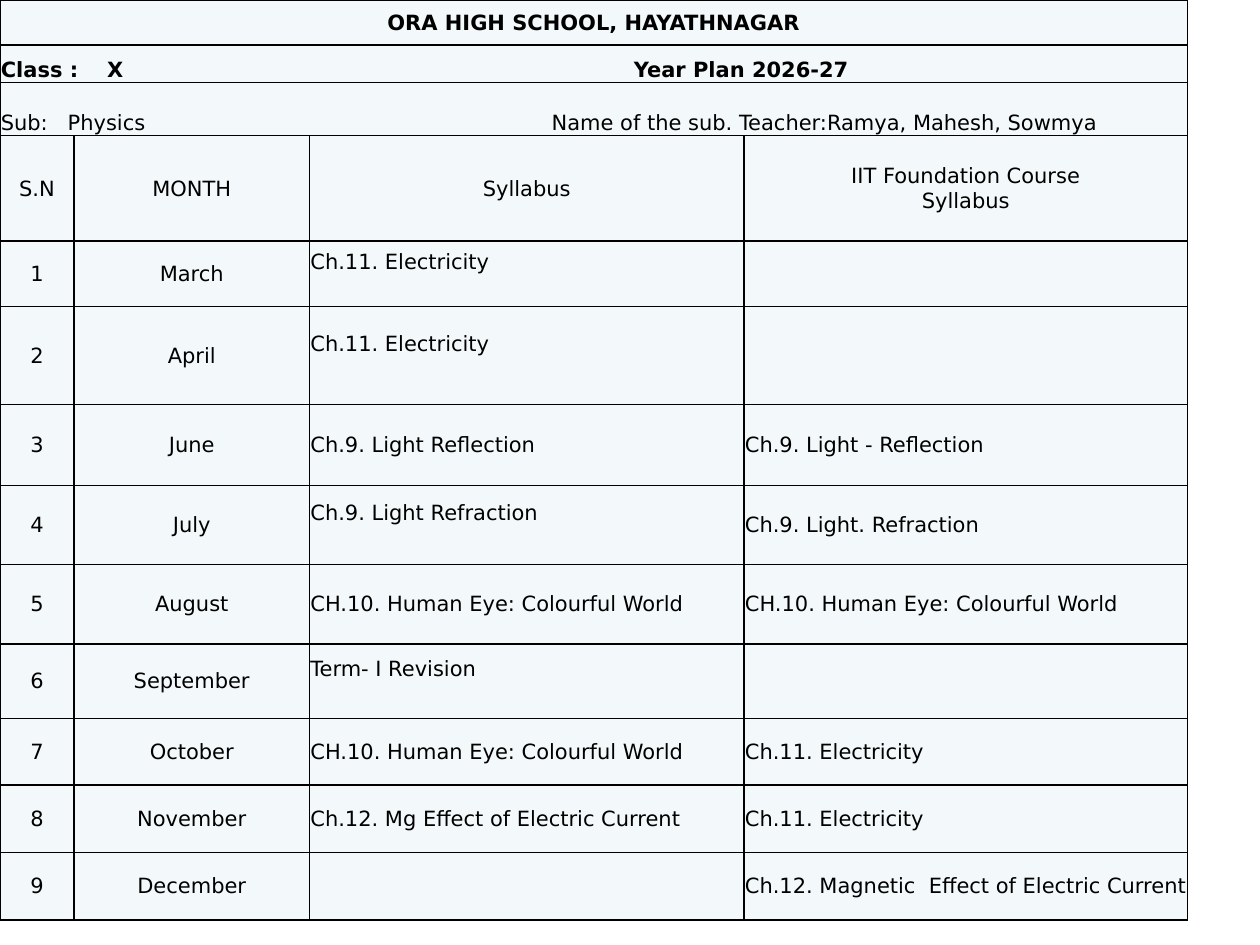
from dataclasses import dataclass

from lxml import etree
from pptx import Presentation
from pptx import util as u
from pptx.dml import color
from pptx.enum import text
from pptx.oxml import ns
from pptx.table import _Cell

FONT = "DejaVu Sans"
INK = "000000"
PAPER = "F3F9FA"
LINE_HEIGHT = 14
COLUMNS = (42.3, 134.6, 248.3, 253.4)
BANNER_HEIGHTS = (25.8, 21.5, 30.3)
HEADER_HEIGHT = 60.2


@dataclass
class Month:
    name: str
    height: float
    syllabus: str = ""
    foundation: str = ""
    raised: bool = False


MONTHS = [
    Month("March", 37.5, "Ch.11. Electricity", raised=True),
    Month("April", 56, "Ch.11. Electricity", raised=True),
    Month("June", 46.1, "Ch.9. Light Reflection", "Ch.9. Light - Reflection"),
    Month("July", 45.4, "Ch.9. Light Refraction", "Ch.9. Light. Refraction", raised=True),
    Month("August", 45.3, "CH.10. Human Eye: Colourful World", "CH.10. Human Eye: Colourful World"),
    Month("September", 42.5, "Term- I Revision", raised=True),
    Month("October", 38.2, "CH.10. Human Eye: Colourful World", "Ch.11. Electricity"),
    Month("November", 38.5, "Ch.12. Mg Effect of Electric Current", "Ch.11. Electricity"),
    Month("December", 38.5, "", "Ch.12. Magnetic  Effect of Electric Current"),
]


def rgb(value: str) -> color.RGBColor:
    return color.RGBColor.from_string(value)


def add_borders(cell: _Cell) -> None:
    tc_pr = cell._tc.get_or_add_tcPr()
    for side in ("lnL", "lnR", "lnT", "lnB"):
        ln = etree.SubElement(tc_pr, ns.qn(f"a:{side}"), w=str(u.Pt(1)))
        fill = etree.SubElement(ln, ns.qn("a:solidFill"))
        etree.SubElement(fill, ns.qn("a:srgbClr"), val=INK)


def write(cell: _Cell, content: str, *, center: bool = False, bold: bool = False,
          bottom: bool = False, raised: bool = False, tabs: tuple[float, ...] = ()) -> None:
    if not content:
        return
    cell.vertical_anchor = text.MSO_ANCHOR.BOTTOM if bottom else text.MSO_ANCHOR.MIDDLE
    cell.margin_bottom = u.Pt(LINE_HEIGHT if raised else 0)
    tf = cell.text_frame
    for i, line in enumerate(content.split("\n")):
        p = tf.add_paragraph() if i else tf.paragraphs[0]
        p.alignment = text.PP_ALIGN.CENTER if center else text.PP_ALIGN.LEFT
        if tabs:
            tab_list = etree.SubElement(p._p.get_or_add_pPr(), ns.qn("a:tabLst"))
            for tab in tabs:
                etree.SubElement(tab_list, ns.qn("a:tab"), pos=str(u.Pt(tab)), algn="l")
        r = p.add_run()
        r.text = line
        r.font.name = FONT
        r.font.size = u.Pt(12)
        r.font.bold = bold
        r.font.color.rgb = rgb(INK)


def main() -> None:
    prs = Presentation()
    prs.slide_width, prs.slide_height = u.Pt(720), u.Pt(540)
    s = prs.slides.add_slide(prs.slide_layouts[6])

    heights = [*BANNER_HEIGHTS, HEADER_HEIGHT, *(m.height for m in MONTHS)]
    sp = s.shapes.add_table(len(heights), len(COLUMNS), 0, 0,
                            u.Pt(sum(COLUMNS)), u.Pt(sum(heights)))
    table = sp.table
    table.first_row = table.horz_banding = False
    for column, width in zip(table.columns, COLUMNS):
        column.width = u.Pt(width)
    for row, height in zip(table.rows, heights):
        row.height = u.Pt(height)
    for cell in table.iter_cells():
        cell.margin_left = cell.margin_right = cell.margin_top = u.Pt(0.5)
        cell.margin_bottom = 0
        add_borders(cell)
        cell.fill.solid()
        cell.fill.fore_color.rgb = rgb(PAPER)

    for i in range(len(BANNER_HEIGHTS)):
        table.cell(i, 0).merge(table.cell(i, len(COLUMNS) - 1))
    write(table.cell(0, 0), "ORA HIGH SCHOOL, HAYATHNAGAR", center=True, bold=True)
    write(table.cell(1, 0), "Class :\tX\tYear Plan 2026-27", bold=True, bottom=True,
          tabs=(60.7, 361.7))
    write(table.cell(2, 0), "Sub:\tPhysics\tName of the sub. Teacher:Ramya, Mahesh, Sowmya",
          bottom=True, tabs=(38.2, 314.8))

    header = len(BANNER_HEIGHTS)
    for i, label in enumerate(("S.N", "MONTH", "Syllabus", "IIT Foundation Course\nSyllabus")):
        write(table.cell(header, i), label, center=True)
    for number, month in enumerate(MONTHS, start=1):
        row = header + number
        write(table.cell(row, 0), str(number), center=True)
        write(table.cell(row, 1), month.name, center=True)
        write(table.cell(row, 2), month.syllabus, raised=month.raised)
        write(table.cell(row, 3), month.foundation)

    prs.save("out.pptx")


if __name__ == "__main__":
    main()
